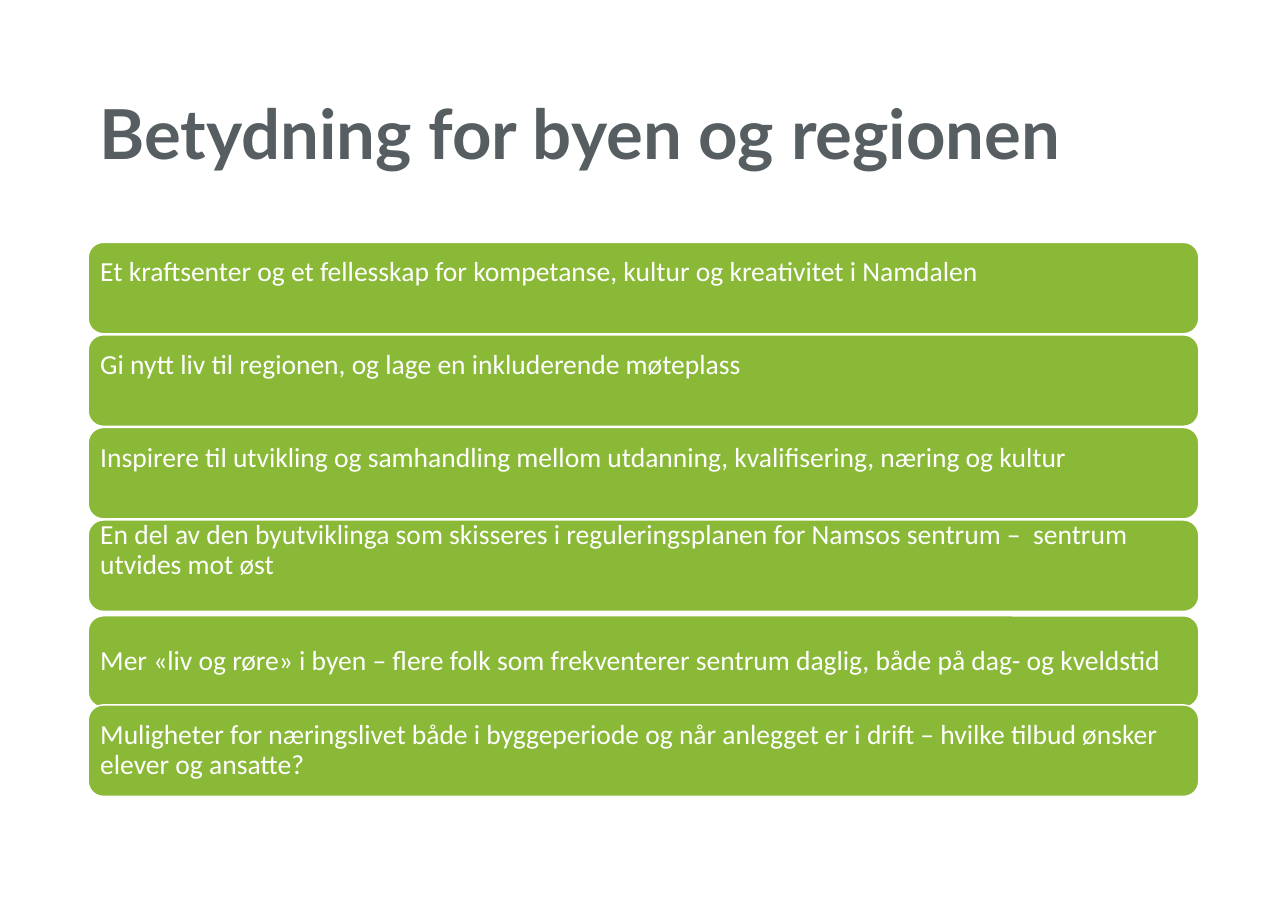
from pptx import Presentation
from pptx.dml.color import RGBColor
from pptx.enum.shapes import MSO_SHAPE
from pptx.enum.text import MSO_ANCHOR, MSO_AUTO_SIZE, PP_ALIGN
from pptx.util import Pt

ROUNDED = MSO_SHAPE.ROUNDED_RECTANGLE
TOP, MIDDLE = MSO_ANCHOR.TOP, MSO_ANCHOR.MIDDLE
LEFT = PP_ALIGN.LEFT
NO_AUTOFIT = MSO_AUTO_SIZE.NONE
TITLE_ONLY = 5

COLOURS = {"title": "575E61", "bar": "8AB938", "white": "FFFFFF"}
MARGIN, WIDTH = 57.6, 725.8
FIRST_TOP, PITCH, BAR_HEIGHT = 158.4, 60.5, 59.8
LINE_HEIGHT = 19.6

# Text, top of the bar, whether one line is kept free below the text
BARS = [
    ("Et kraftsenter og et fellesskap for kompetanse, kultur og kreativitet i Namdalen",
     FIRST_TOP, True),
    ("Gi nytt liv til regionen, og lage en inkluderende møteplass",
     FIRST_TOP + PITCH, True),
    ("Inspirere til utvikling og samhandling mellom utdanning, kvalifisering, næring og kultur",
     FIRST_TOP + 2 * PITCH, True),
    ("En del av den byutviklinga som skisseres i reguleringsplanen for Namsos sentrum –  sentrum "
     "utvides mot øst", FIRST_TOP + 3 * PITCH, True),
    ("Mer «liv og røre» i byen – flere folk som frekventerer sentrum daglig, både på dag- og "
     "kveldstid", 402.5, False),
    ("Muligheter for næringslivet både i byggeperiode og når anlegget er i drift – hvilke tilbud "
     "ønsker elever og ansatte?", 460.8, False),
]


def colour(name):
    return RGBColor.from_string(COLOURS[name])


class SlideBuilder:
    """Holds the text style and the slide being built."""

    line_spacing = 0.9

    def __init__(self, slide):
        self.slide = slide

    def set_text(self, shape, text, font_name, size, colour_name, anchor, insets, bold=False):
        """Fill a shape with one paragraph; insets are left, top, right, bottom."""
        frame = shape.text_frame
        frame.text = text
        frame.word_wrap = True
        frame.auto_size = NO_AUTOFIT
        frame.vertical_anchor = anchor
        (frame.margin_left, frame.margin_top,
         frame.margin_right, frame.margin_bottom) = map(Pt, insets)
        paragraph = frame.paragraphs[0]
        paragraph.alignment = LEFT
        paragraph.line_spacing = self.line_spacing
        paragraph.space_before = Pt(0)
        font = paragraph.runs[0].font
        font.name, font.size, font.bold = font_name, Pt(size), bold
        font.color.rgb = colour(colour_name)

    def title(self, text):
        title = self.slide.shapes.title
        title.left, title.top, title.width, title.height = map(Pt, (MARGIN, 61.9, WIDTH, 76.3))
        self.set_text(title, text, "Lato", 45, "title", TOP, (7.2, 3.6, 7.2, 3.6), bold=True)

    def bar(self, text, top, free_line):
        bar = self.slide.shapes.add_shape(
            ROUNDED, Pt(MARGIN), Pt(top), Pt(WIDTH), Pt(BAR_HEIGHT))
        bar.shadow.inherit = False
        bar.fill.solid()
        bar.fill.fore_color.rgb = colour("bar")
        bar.line.color.rgb = colour("white")
        bar.line.width = Pt(1)
        bottom = LINE_HEIGHT if free_line else 0
        self.set_text(bar, text, "Calibri", 18, "white", MIDDLE, (5, 0, 5, bottom))


def main():
    presentation = Presentation()
    presentation.slide_width, presentation.slide_height = Pt(841.68), Pt(595.44)
    slide = presentation.slides.add_slide(presentation.slide_layouts[TITLE_ONLY])
    builder = SlideBuilder(slide)
    builder.title("Betydning for byen og regionen")
    for text, top, free_line in BARS:
        builder.bar(text, top, free_line)
    presentation.save("out.pptx")


if __name__ == "__main__":
    main()
